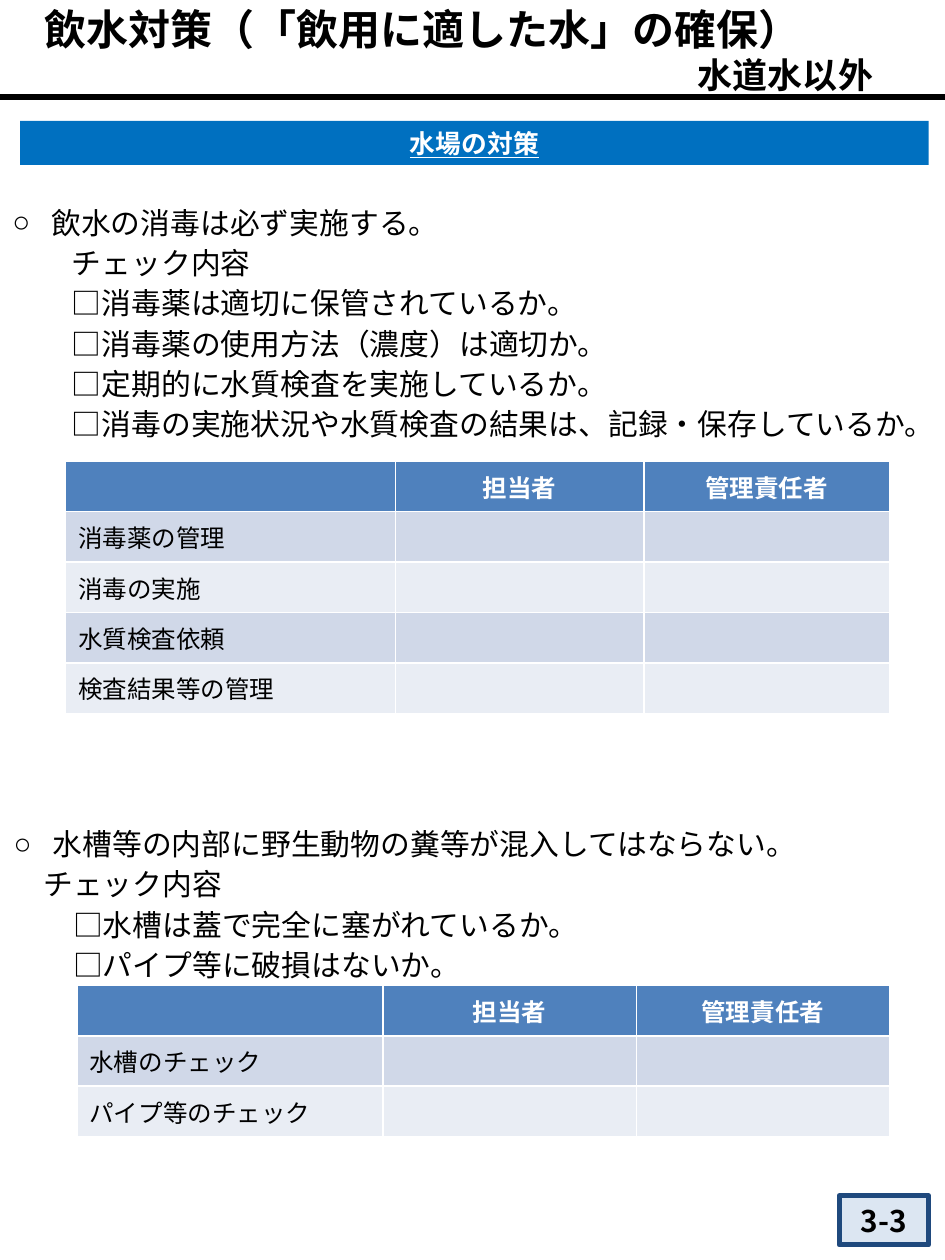
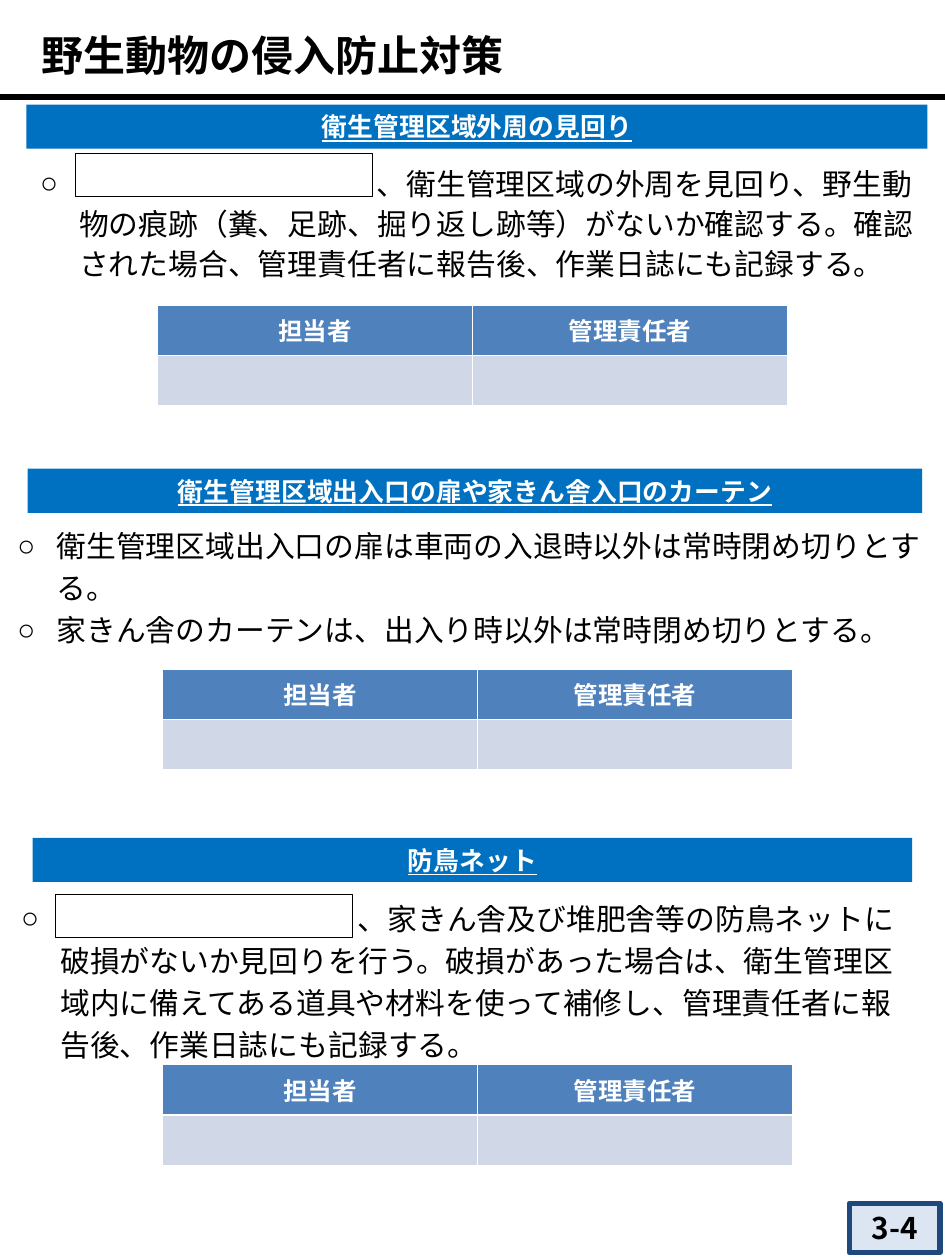
from dataclasses import dataclass

from lxml import etree
from pptx import Presentation
from pptx.dml.color import RGBColor
from pptx.enum.shapes import MSO_CONNECTOR, MSO_SHAPE
from pptx.enum.text import MSO_ANCHOR, MSO_AUTO_SIZE, PP_ALIGN
from pptx.oxml.ns import qn
from pptx.util import Inches, Pt

LEFT, CENTER, RIGHT = PP_ALIGN.LEFT, PP_ALIGN.CENTER, PP_ALIGN.RIGHT
MIDDLE = MSO_ANCHOR.MIDDLE
GROW = MSO_AUTO_SIZE.SHAPE_TO_FIT_TEXT
RECT, STRAIGHT = MSO_SHAPE.RECTANGLE, MSO_CONNECTOR.STRAIGHT


@dataclass(frozen=True)
class Theme:
    font: str = "Noto Sans CJK JP"
    latin: str = "Arial"
    black: str = "000000"
    white: str = "FFFFFF"
    band: str = "0070C0"
    head: str = "4F81BD"
    rows: tuple = ("D0D8E8", "E9EDF4")
    badge: str = "DCE6F2"
    edge: str = "1F497D"
    title: float = 24
    sub: float = 20
    body: float = 17
    label: float = 14.7
    cell: float = 14


T = Theme()
HANG = 0.31          # hanging indent of a bullet
EM = T.body / 72     # width of one full-width character
ROW = 0.4
ROLES = ["担当者", "管理責任者"]


def rgb(code):
    return RGBColor.from_string(code)


def inches(box):
    return [Inches(v) for v in box]


def style(para, size, color=T.black, bold=False, align=LEFT, line=False, face=T.font):
    para.alignment = align
    font = para.font
    font.size, font.bold, font.name = Pt(size), bold, face
    font.color.rgb = rgb(color)
    if line:
        font.underline = True
    props = para._p.get_or_add_pPr().find(qn("a:defRPr"))
    etree.SubElement(props, qn("a:ea"), typeface=T.font)


def indent(para, left, bullet=False, tab=None):
    props = para._p.get_or_add_pPr()
    props.set("marL", str(Inches(left)))
    props.set("indent", str(Inches(-HANG if bullet else 0)))
    if bullet:
        etree.SubElement(props, qn("a:buFont"), typeface=T.latin)
        etree.SubElement(props, qn("a:buChar"), char="○")
    if tab:
        stops = etree.SubElement(props, qn("a:tabLst"))
        etree.SubElement(stops, qn("a:tab"), pos=str(Inches(tab)), algn="l")


def add_rect(slide, box, fill=None, edge=None, width=0):
    rect = slide.shapes.add_shape(RECT, *inches(box))
    rect.shadow.inherit = False
    if fill:
        rect.fill.solid()
        rect.fill.fore_color.rgb = rgb(fill)
    else:
        rect.fill.background()
    if edge:
        rect.line.color.rgb = rgb(edge)
        rect.line.width = Pt(width)
    else:
        rect.line.fill.background()
    return rect


def add_label(rect, text, size, color, **look):
    frame = rect.text_frame
    frame.vertical_anchor = MIDDLE
    frame.margin_top = frame.margin_bottom = 0
    frame.text = text
    style(frame.paragraphs[0], size, color, True, CENTER, **look)


def add_band(slide, box, text, face=T.font):
    add_label(add_rect(slide, box, T.band), text, T.label, T.white, line=True, face=face)


def add_badge(slide, box, text):
    add_label(add_rect(slide, box, T.badge, T.edge, 3), text, T.body, T.black)


def add_blank(slide, left, top):
    """Box for writing in by hand."""
    add_rect(slide, (left, top, 2.36, 0.34), edge=T.black, width=0.75)


def add_head(slide, box, text, sub=None):
    """Title with the rule beneath it."""
    rule = slide.shapes.add_connector(STRAIGHT, *inches((0, 0.77, 7.5, 0.77)))
    rule.line.color.rgb = rgb(T.black)
    rule.line.width = Pt(3)
    etree.SubElement(rule._element.spPr, qn("a:effectLst"))

    title = slide.shapes.title
    title.left, title.top, title.width, title.height = inches(box)
    frame = title.text_frame
    frame.auto_size, frame.vertical_anchor = GROW, MIDDLE
    frame.margin_left = frame.margin_right = Inches(0.12)
    frame.margin_top = frame.margin_bottom = Inches(0.06)
    frame.text = text
    style(frame.paragraphs[0], T.title, bold=True)
    if sub:
        para = frame.add_paragraph()
        para.text = sub
        style(para, T.sub, bold=True, align=RIGHT)


def add_body(slide, box, lines, pitch):
    """Lines are (level, text): None is a bullet, a number an indent in characters."""
    frame = slide.shapes.add_textbox(*inches(box)).text_frame
    frame.word_wrap, frame.auto_size = True, GROW
    for i, (level, text) in enumerate(lines):
        para = frame.add_paragraph() if i else frame.paragraphs[0]
        para.text = text
        para.line_spacing = Pt(pitch)
        if level is None:
            tab = HANG + 10 * EM if text.startswith("\t") else None
            indent(para, HANG, True, tab)
        else:
            indent(para, level * EM)
        style(para, T.body)


def add_grid(slide, left, top, widths, rows):
    box = (left, top, sum(widths), ROW * len(rows))
    grid = slide.shapes.add_table(len(rows), len(widths), *inches(box)).table
    for col, width in zip(grid.columns, widths):
        col.width = Inches(width)
    for r, row in enumerate(rows):
        for c, text in enumerate(row):
            cell = grid.cell(r, c)
            cell.vertical_anchor = MIDDLE
            cell.fill.solid()
            cell.fill.fore_color.rgb = rgb(T.rows[(r - 1) % 2] if r else T.head)
            if not text:
                continue
            cell.text = text
            para = cell.text_frame.paragraphs[0]
            if r:
                style(para, T.cell)
            else:
                style(para, T.cell, T.white, True, CENTER)


def add_duties(slide, left, top, widths, tasks):
    rows = [["", *ROLES]] + [[task, "", ""] for task in tasks]
    add_grid(slide, left, top, widths, rows)


def add_signs(slide, left, top):
    add_grid(slide, left, top, [2.5, 2.5], [ROLES, ["", ""]])


def build_water(slide):
    add_head(slide, (0.23, -0.04, 6.82, 0.87),
             "飲水対策（「飲用に適した水」の確保）", "水道水以外")
    add_band(slide, (0.16, 0.96, 7.21, 0.35), "水場の対策", T.latin)
    add_body(slide, (0, 1.54, 7.5, 2), [
        (None, "飲水の消毒は必ず実施する。"),
        (2, "チェック内容"),
        (2, "□消毒薬は適切に保管されているか。"),
        (2, "□消毒薬の使用方法（濃度）は適切か。"),
        (2, "□定期的に水質検査を実施しているか。"),
        (2, "□消毒の実施状況や水質検査の結果は、記録・保存しているか。"),
    ], 23)
    add_duties(slide, 0.52, 3.66, [2.62, 1.97, 1.95],
               ["消毒薬の管理", "消毒の実施", "水質検査依頼", "検査結果等の管理"])
    add_body(slide, (0.01, 6.47, 7.5, 1.38), [
        (None, "水槽等の内部に野生動物の糞等が混入してはならない。"),
        (1, "チェック内容"),
        (2, "□水槽は蓋で完全に塞がれているか。"),
        (2, "□パイプ等に破損はないか。"),
    ], 23)
    add_duties(slide, 0.61, 7.82, [2.43, 2.01, 2.01],
               ["水槽のチェック", "パイプ等のチェック"])
    add_badge(slide, (6.66, 9.49, 0.71, 0.39), "3-3")


def build_animals(slide):
    add_head(slide, (0.21, 0.17, 6.53, 0.53), "野生動物の侵入防止対策")

    add_band(slide, (0.21, 0.83, 7.15, 0.35), "衛生管理区域外周の見回り")
    add_body(slide, (0.22, 1.23, 7.21, 1.03), [
        (None, "\t、衛生管理区域の外周を見回り、野生動物の痕跡（糞、足跡、掘り返し跡等）"
               "がないか確認する。確認された場合、管理責任者に報告後、作業日誌にも記録する。"),
    ], 23)
    add_blank(slide, 0.6, 1.22)
    add_signs(slide, 1.25, 2.42)

    add_band(slide, (0.22, 3.72, 7.1, 0.35),
             "衛生管理区域出入口の扉や家きん舎入口のカーテン")
    add_body(slide, (0.04, 4.09, 7.42, 1.07), [
        (None, "衛生管理区域出入口の扉は車両の入退時以外は常時閉め切りとする。"),
        (None, "家きん舎のカーテンは、出入り時以外は常時閉め切りとする。"),
    ], 24)
    add_signs(slide, 1.29, 5.31)

    add_band(slide, (0.26, 6.65, 6.98, 0.35), "防鳥ネット")
    add_body(slide, (0.07, 7.05, 7.24, 1.4), [
        (None, "\t、家きん舎及び堆肥舎等の防鳥ネットに破損がないか見回りを行う。"
               "破損があった場合は、衛生管理区域内に備えてある道具や材料を使って補修し、"
               "管理責任者に報告後、作業日誌にも記録する。"),
    ], 24)
    add_blank(slide, 0.44, 7.1)
    add_signs(slide, 1.29, 8.45)

    add_badge(slide, (6.74, 9.55, 0.72, 0.39), "3-4")


def main():
    deck = Presentation()
    deck.slide_width, deck.slide_height = Inches(7.5), Inches(10)
    for build in (build_water, build_animals):
        build(deck.slides.add_slide(deck.slide_layouts[5]))
    deck.save("out.pptx")


if __name__ == "__main__":
    main()
